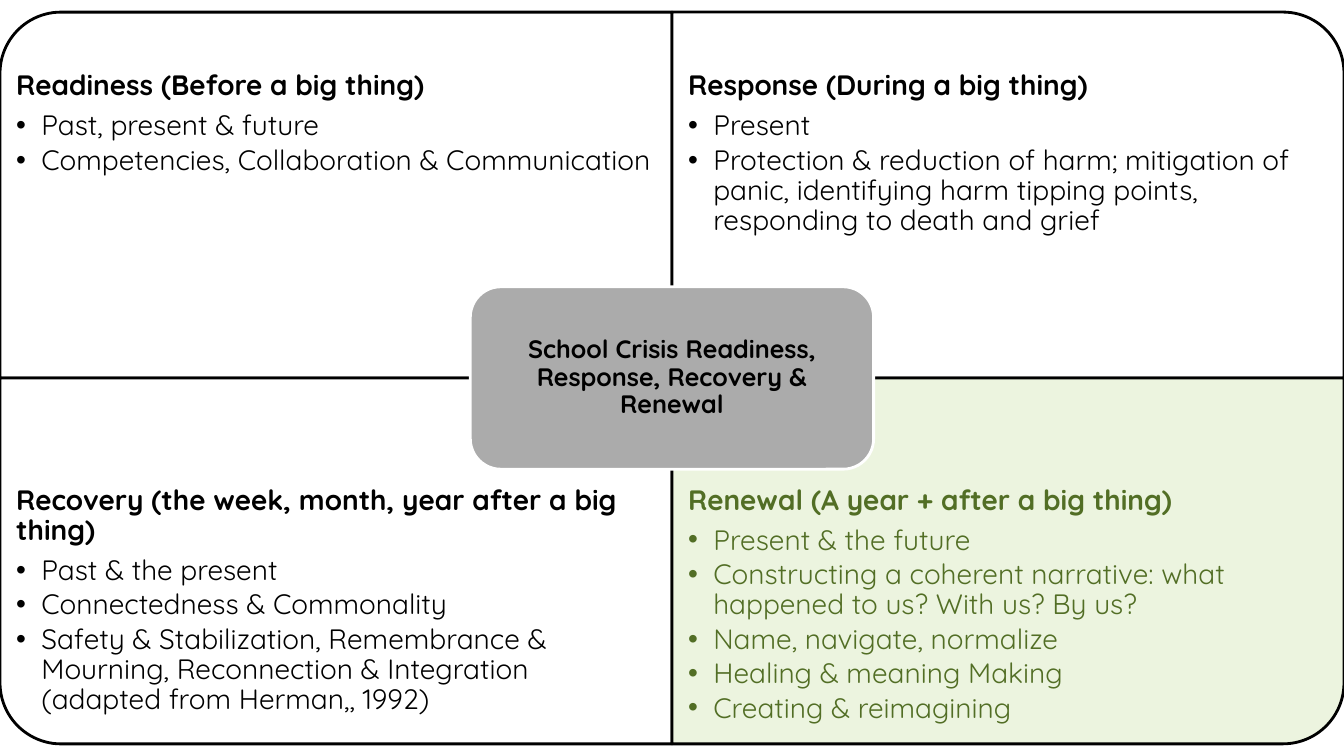
import pptx
import pptx.dml.color
import pptx.enum.shapes
import pptx.enum.text
import pptx.oxml
import pptx.oxml.ns
import pptx.util
from pptx.util import Inches

RGBColor = pptx.dml.color.RGBColor
BLACK = RGBColor(0x00, 0x00, 0x00)
WHITE = RGBColor(0xFF, 0xFF, 0xFF)
GREY = RGBColor(0xAB, 0xAB, 0xAB)
PALE_GREEN = RGBColor(0xEC, 0xF4, 0xDF)
DARK_GREEN = RGBColor(0x52, 0x6E, 0x25)

SLIDE_WIDTH, SLIDE_HEIGHT = 13.33, 7.5
QUADRANT_WIDTH, QUADRANT_HEIGHT = SLIDE_WIDTH / 2, 3.63
GRID_TOP = 0.12
TEXT_HEIGHT = 2.72
# Top insets by row: the upper headings start one line lower
TEXT_INSETS = (0.59, 0.16)

# Column, row, rotation, fill, text colour, heading, bullet points
PHASES = (
    (0, 0, 270, WHITE, BLACK, "Readiness (Before a big thing)",
     ("Past, present & future",
      "Competencies, Collaboration & Communication")),
    (1, 0, 0, WHITE, BLACK, "Response (During a big thing)",
     ("Present",
      "Protection & reduction of harm; mitigation of panic, "
      "identifying harm tipping points, responding to death and grief")),
    (0, 1, 180, WHITE, BLACK,
     "Recovery (the week, month, year after a big thing)",
     ("Past & the present",
      "Connectedness & Commonality",
      "Safety & Stabilization, Remembrance & Mourning, "
      "Reconnection & Integration (adapted from Herman,, 1992)")),
    (1, 1, 90, PALE_GREEN, DARK_GREEN, "Renewal (A year + after a big thing)",
     ("Present & the future",
      "Constructing a coherent narrative: what happened to us? "
      "With us? By us?",
      "Name, navigate, normalize",
      "Healing & meaning Making",
      "Creating & reimagining")),
)


def apply_format(target, values):
    for name, value in values.items():
        setattr(target, name, value)


def add_panel(slide, kind, box, fill, line):
    shape = slide.shapes.add_shape(kind, *(Inches(length) for length in box))
    shape.shadow.inherit = False
    shape.fill.solid()
    shape.fill.fore_color.rgb = fill
    shape.line.color.rgb = line
    shape.line.width = pptx.util.Pt(2)
    return shape


def set_margins(frame, margin, top):
    apply_format(frame, {
        "word_wrap": True,
        "margin_left": Inches(margin),
        "margin_right": Inches(margin),
        "margin_top": Inches(top),
        "margin_bottom": Inches(margin),
    })


def write_paragraph(paragraph, text, size, color, bold, space_after):
    run = paragraph.add_run()
    run.text = text
    apply_format(paragraph, {"line_spacing": 0.9,
                             "space_after": pptx.util.Pt(space_after)})
    apply_format(run.font, {"name": "Quicksand", "size": pptx.util.Pt(size),
                            "bold": bold})
    run.font.color.rgb = color


def add_bullet(paragraph):
    paragraph.level = 1
    properties = paragraph._p.get_or_add_pPr()
    properties.set("marL", str(Inches(0.25)))
    properties.set("indent", str(Inches(-0.25)))
    namespace = pptx.oxml.ns.nsdecls("a")
    properties.append(pptx.oxml.parse_xml(
        f'<a:buFont {namespace} typeface="Arial"/>'))
    properties.append(pptx.oxml.parse_xml(
        f'<a:buChar {namespace} char="•"/>'))


def add_quadrant(slide, column, row, rotation, fill):
    center_x = (column + 0.5) * QUADRANT_WIDTH
    center_y = GRID_TOP + (row + 0.5) * QUADRANT_HEIGHT
    width, height = QUADRANT_WIDTH, QUADRANT_HEIGHT
    if rotation in (90, 270):
        width, height = height, width
    box = (center_x - width / 2, center_y - height / 2, width, height)
    kind = pptx.enum.shapes.MSO_SHAPE.ROUND_1_RECTANGLE
    add_panel(slide, kind, box, fill, BLACK).rotation = rotation


def add_phase_text(slide, column, row, color, heading, points):
    top = GRID_TOP + row * (2 * QUADRANT_HEIGHT - TEXT_HEIGHT)
    box = (column * QUADRANT_WIDTH, top, QUADRANT_WIDTH, TEXT_HEIGHT)
    text_box = slide.shapes.add_textbox(*(Inches(length) for length in box))
    frame = text_box.text_frame
    set_margins(frame, 0.16, TEXT_INSETS[row])
    write_paragraph(frame.paragraphs[0], heading, 20, color, True, 7)
    for point in points:
        paragraph = frame.add_paragraph()
        write_paragraph(paragraph, point, 20, color, False, 3)
        add_bullet(paragraph)


def add_center_label(slide, text):
    width, height = 4, 1.81
    box = ((SLIDE_WIDTH - width) / 2,
           GRID_TOP + QUADRANT_HEIGHT - height / 2, width, height)
    kind = pptx.enum.shapes.MSO_SHAPE.ROUNDED_RECTANGLE
    frame = add_panel(slide, kind, box, GREY, WHITE).text_frame
    # The preset insets its text by 0.09 inches on each side
    set_margins(frame, 0.07, 0.07)
    frame.vertical_anchor = pptx.enum.text.MSO_ANCHOR.MIDDLE
    paragraph = frame.paragraphs[0]
    paragraph.alignment = pptx.enum.text.PP_ALIGN.CENTER
    write_paragraph(paragraph, text, 18, BLACK, True, 6.3)


def main():
    presentation = pptx.Presentation()
    apply_format(presentation, {"slide_width": Inches(SLIDE_WIDTH),
                                "slide_height": Inches(SLIDE_HEIGHT)})
    slide = presentation.slides.add_slide(presentation.slide_layouts[6])

    # Four phases around the centre
    for column, row, rotation, fill, color, heading, points in PHASES:
        add_quadrant(slide, column, row, rotation, fill)
        add_phase_text(slide, column, row, color, heading, points)

    # Central label
    add_center_label(
        slide, "School Crisis Readiness, Response, Recovery & Renewal")
    presentation.save("out.pptx")


if __name__ == "__main__":
    main()
